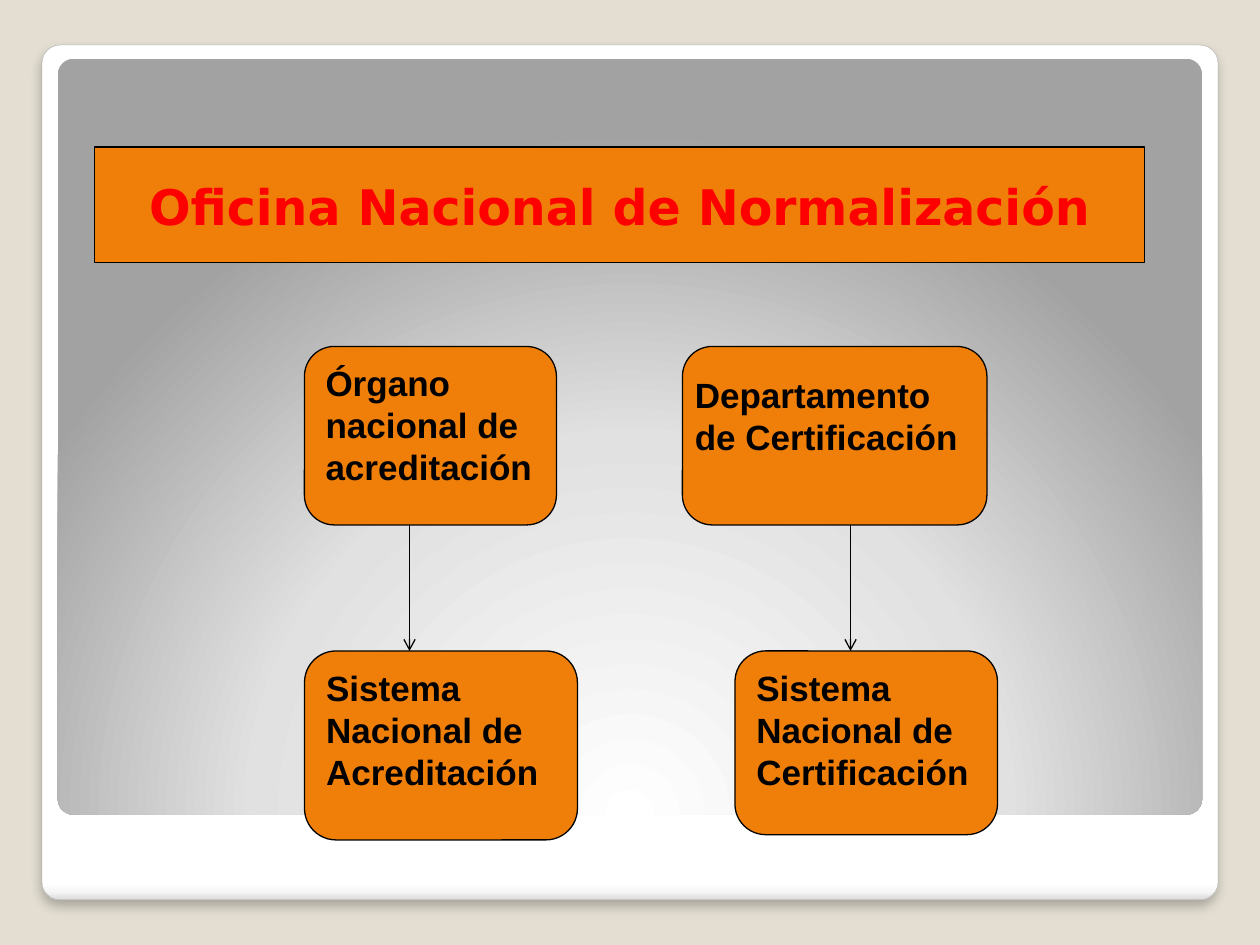
from lxml.etree import SubElement
from pptx import Presentation
from pptx.dml.color import RGBColor
from pptx.enum.shapes import MSO_CONNECTOR, MSO_SHAPE
from pptx.enum.text import MSO_ANCHOR, MSO_AUTO_SIZE, PP_ALIGN
from pptx.oxml import parse_xml
from pptx.oxml.ns import nsdecls, qn
from pptx.util import Inches, Pt

BACKGROUND = RGBColor(0xE3, 0xDE, 0xD1)
FRAME_LINE = RGBColor(0xA4, 0xA4, 0xA4)
ORANGE = RGBColor(0xF0, 0x7F, 0x09)
BLACK = RGBColor(0x00, 0x00, 0x00)
RED = RGBColor(0xFF, 0x00, 0x00)

# Content; positions are left, top, width, height in grid cells (12 per inch)
TITLE = "Oficina Nacional de Normalización"
TITLE_CELLS = (13, 11.5, 102, 11.5)
BANNER_CELLS = (9, 14, 100, 11)
FRAME_CELLS = (4, 4.3, 112, 81.4)
PANEL_CELLS = (5.5, 5.6, 109, 72)
BOXES = [
    ("Órgano nacional de acreditación", (29, 33, 24, 17)),
    ("Sistema Nacional de Acreditación", (29, 62, 26, 18)),
    ("Sistema Nacional de Certificación", (70, 62, 25, 17.5)),
    ("", (65, 33, 29, 17)),
]
DEPARTMENT = ("Departamento de Certificación", (65, 35, 29, 9.25))
ARROW_COLUMNS = (39, 81)
ARROW_ROWS = (50, 62)

FRAME_STOPS = [(0, "FFFFFF"), (98, "FFFFFF"), (99, "F7F7F7"), (100, "DADADA")]
PANEL_STOPS = [(0, "FFFFFF"), (55, "E1E1E1"), (100, "A2A2A2")]
DOWNWARD = '<a:lin ang="5400000" scaled="0"/>'
FROM_BOTTOM = ('<a:path path="circle"><a:fillToRect l="50000" t="175000" '
               'r="50000" b="-75000"/></a:path>')


def cells(*values):
    return [Inches(value / 12) for value in values]


def add_box(slide, position, corner, line_color=BLACK, line_width=0.75):
    shape = slide.shapes.add_shape(MSO_SHAPE.ROUNDED_RECTANGLE, *cells(*position))
    shape.adjustments[0] = corner
    shape.shadow.inherit = False
    shape.fill.solid()
    shape.fill.fore_color.rgb = ORANGE
    shape.line.color.rgb = line_color
    shape.line.width = Pt(line_width)
    return shape


def set_gradient(shape, stops, direction):
    stop_xml = "".join(
        f'<a:gs pos="{position * 1000}"><a:srgbClr val="{color}"/></a:gs>'
        for position, color in stops)
    gradient = parse_xml(f'<a:gradFill {nsdecls("a")} rotWithShape="1">'
                         f'<a:gsLst>{stop_xml}</a:gsLst>{direction}</a:gradFill>')
    properties = shape.element.spPr
    properties.replace(properties.find(qn("a:solidFill")), gradient)


def write(shape, text, font_name="Arial", size=20, color=BLACK,
          anchor=MSO_ANCHOR.TOP):
    frame = shape.text_frame
    frame.word_wrap = True
    frame.vertical_anchor = anchor
    paragraph = frame.paragraphs[0]
    paragraph.alignment = PP_ALIGN.LEFT
    run = paragraph.add_run()
    run.text = text
    run.font.name = font_name
    run.font.size = Pt(size)
    run.font.bold = True
    run.font.color.rgb = color


def add_arrow(slide, column):
    top, bottom = ARROW_ROWS
    arrow = slide.shapes.add_connector(
        MSO_CONNECTOR.STRAIGHT, *cells(column, top, column, bottom))
    arrow.line.color.rgb = BLACK
    arrow.line.width = Pt(0.75)
    SubElement(arrow.line._get_or_add_ln(), qn("a:tailEnd"), type="arrow")
    SubElement(arrow.element.spPr, qn("a:effectLst"))


def main():
    presentation = Presentation()
    presentation.slide_width, presentation.slide_height = cells(120, 90)
    slide = presentation.slides.add_slide(presentation.slide_layouts[5])
    slide.background.fill.solid()
    slide.background.fill.fore_color.rgb = BACKGROUND

    # White frame with a soft shadow, and the grey panel inside it
    frame = add_box(slide, FRAME_CELLS, 0.021, FRAME_LINE, 0.16)
    set_gradient(frame, FRAME_STOPS, DOWNWARD)
    effects = frame.element.spPr.find(qn("a:effectLst"))
    effects.append(parse_xml(
        f'<a:outerShdw {nsdecls("a")} blurRad="{Pt(6)}" dist="{Pt(4)}" '
        'dir="5400000" algn="tl" rotWithShape="0"><a:srgbClr val="000000">'
        '<a:alpha val="25000"/></a:srgbClr></a:outerShdw>'))
    panel = add_box(slide, PANEL_CELLS, 0.021)
    set_gradient(panel, PANEL_STOPS, FROM_BOTTOM)
    panel.line.fill.background()

    # Title on its banner, brought in front of it
    add_box(slide, BANNER_CELLS, 0)
    title = slide.shapes.title
    title.left, title.top, title.width, title.height = cells(*TITLE_CELLS)
    title.text_frame.auto_size = MSO_AUTO_SIZE.NONE
    write(title, TITLE, "DejaVu Sans", 28, RED, MSO_ANCHOR.BOTTOM)
    title.element.getparent().append(title.element)

    # Organisation boxes and arrows
    for text, position in BOXES:
        box = add_box(slide, position, 0.167)
        if text:
            write(box, text)
    for column in ARROW_COLUMNS:
        add_arrow(slide, column)

    # Department label
    text, position = DEPARTMENT
    write(slide.shapes.add_textbox(*cells(*position)), text)

    presentation.save("out.pptx")


if __name__ == "__main__":
    main()
